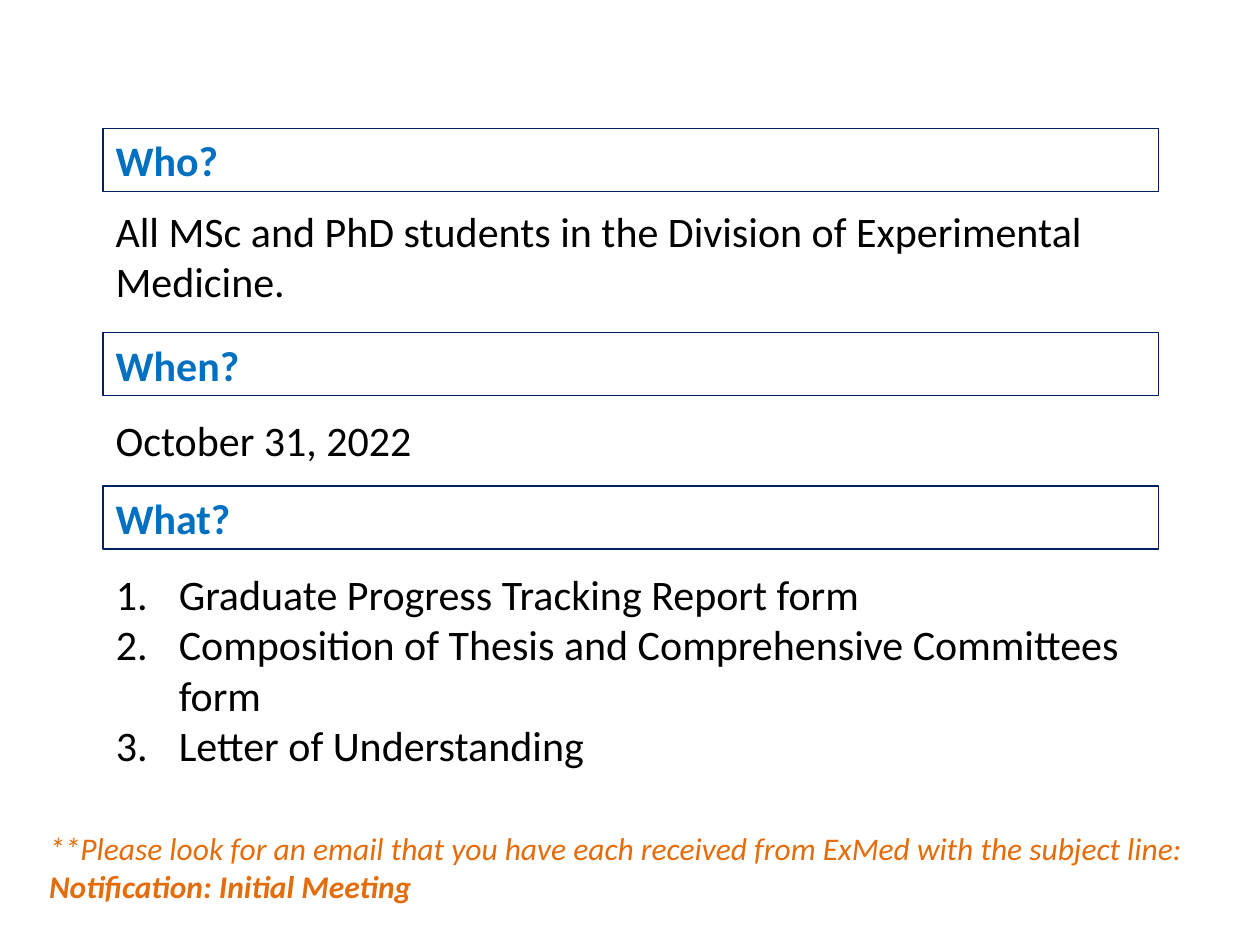
import pptx
import pptx.util
import pptx.dml.color
import pptx.enum.shapes
import pptx.enum.text
import pptx.oxml.ns
from lxml import etree
from pptx.util import Cm, Pt

ALIGN = pptx.enum.text.PP_ALIGN


class Theme:
    face = "Calibri"
    edge = "002060"
    head = {"size": Pt(24), "bold": True, "color": "0070C0"}
    body = {"size": Pt(24), "color": "000000"}
    note = {"size": Pt(18), "italic": True, "color": "E46C0A"}


LEFT, WIDTH, BAR = Cm(2.08), Cm(21.28), Cm(1.27)

# Heading, its top, answer, answer top and height
PARTS = [
    ("Who?", 2.59,
     "All MSc and PhD students in the Division of Experimental Medicine.",
     4.01, 2.31),
    ("When?", 6.71, "October 31, 2022", 8.23, 1.27),
]
FORMS = [
    "Graduate Progress Tracking Report form",
    "Composition of Thesis and Comprehensive Committees form",
    "Letter of Understanding",
]


def rgb(code):
    return pptx.dml.color.RGBColor.from_string(code)


def style(font, look):
    font.name = Theme.face
    for key, value in look.items():
        if key == "color":
            font.color.rgb = rgb(value)
        else:
            setattr(font, key, value)


def write(frame, lines, look, align=ALIGN.LEFT):
    """Fill a text frame with one paragraph per line."""
    frame.word_wrap = True
    frame.auto_size = pptx.enum.text.MSO_AUTO_SIZE.NONE
    frame.vertical_anchor = pptx.enum.text.MSO_ANCHOR.TOP
    for i, line in enumerate(lines):
        para = frame.paragraphs[0] if i == 0 else frame.add_paragraph()
        para.alignment = align
        para.space_before = Pt(0)
        run = para.add_run()
        run.text = line
        style(run.font, look)
    return frame.paragraphs


def add_bar(slide, text, top):
    bar = slide.shapes.add_shape(
        pptx.enum.shapes.MSO_SHAPE.RECTANGLE, LEFT, Cm(top), WIDTH, BAR)
    bar.shadow.inherit = False
    bar.fill.background()
    bar.line.color.rgb = rgb(Theme.edge)
    bar.line.width = Pt(0.75)
    write(bar.text_frame, [text], Theme.head)


def add_text(slide, lines, place, look, align=ALIGN.LEFT):
    box = slide.shapes.add_textbox(*place)
    return write(box.text_frame, lines, look, align)


def fill_list(holder, items, place):
    """Turn the body placeholder into a numbered list."""
    for key, value in zip(("left", "top", "width", "height"), place):
        setattr(holder, key, value)
    for para in write(holder.text_frame, items, Theme.body):
        props = para._p.get_or_add_pPr()
        props.set("marL", str(Cm(1.27)))
        props.set("indent", str(-Cm(1.27)))
        num = etree.SubElement(props, pptx.oxml.ns.qn("a:buAutoNum"))
        num.set("type", "arabicPeriod")


def main():
    deck = pptx.Presentation()
    deck.slide_width, deck.slide_height = Cm(25.4), Cm(19.05)
    slide = deck.slides.add_slide(deck.slide_layouts[1])

    # The slide has no title
    title = slide.shapes.title._element
    title.getparent().remove(title)

    # Who and when
    for head, top, text, low, high in PARTS:
        add_bar(slide, head, top)
        add_text(slide, [text], (LEFT, Cm(low), WIDTH, Cm(high)), Theme.body)

    # What: the numbered forms
    add_bar(slide, "What?", 9.8)
    fill_list(slide.placeholders[1], FORMS,
              (LEFT, Cm(11.33), WIDTH, Cm(4.37)))

    # Closing note, with the subject line in bold
    note = add_text(
        slide,
        ["**Please look for an email that you have each received from ExMed "
         "with the subject line:",
         "Notification: Initial Meeting"],
        (Cm(0.74), Cm(16.59), Cm(23.57), Cm(1.8)), Theme.note, ALIGN.JUSTIFY)
    note[1].runs[0].font.bold = True

    deck.save("out.pptx")


if __name__ == "__main__":
    main()
